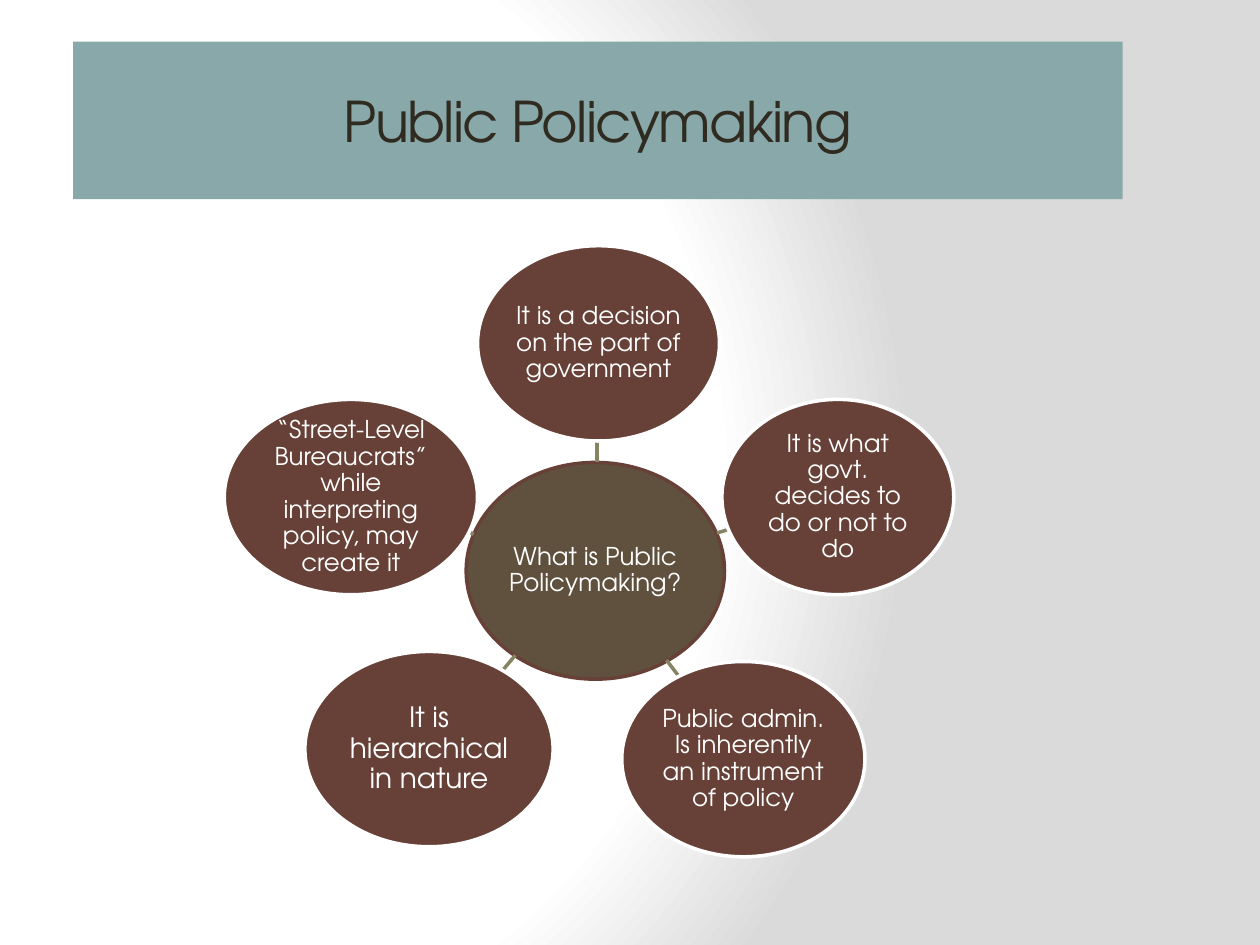
from lxml import etree
from pptx import Presentation
from pptx import util as u
from pptx.dml.color import RGBColor
from pptx.enum import shapes, text
from pptx.oxml import parse_xml
from pptx.oxml.ns import nsdecls, qn

COLS, ROWS = 100, 75
FONT = "TeX Gyre Adventor"
HUES = {
    "band": "88A8AA", "ink": "2F2B20", "hub": "5F513E", "node": "674137",
    "spoke": "878463", "white": "FFFFFF", "edge": "DADADA",
}
NODE_H = 15.5
# words, centre column, centre row, width, type size, spoke start and end
NODES = [
    ("It is a decision on the part of government",
     47.5, 27.25, 19.2, 14, (47.4, 36.7), (47.4, 35)),
    ("It is what govt. decides to do or not to do",
     66.5, 39.45, 18.4, 14, (56.9, 42.3), (57.9, 42)),
    ("Public admin. Is inherently an instrument of policy",
     59, 60.25, 19.3, 14, (52.9, 52.4), (53.9, 53.7)),
    ("It is hierarchical in nature",
     34.05, 59.45, 19.7, 16, (40.9, 52), (39.9, 53.2)),
    ("“Street-Level Bureaucrats” while interpreting policy, may create it",
     27.85, 39.45, 20.1, 14, (37.6, 42.4), (37.2, 42.2)),
]


def hue(name):
    return RGBColor.from_string(HUES[name])


def write(frame, words, size=14, color="white", lead=None, track=None, inset=None):
    """Fill a text frame with one centred paragraph."""
    frame.word_wrap = True
    frame.auto_size = text.MSO_AUTO_SIZE.NONE
    frame.vertical_anchor = text.MSO_ANCHOR.MIDDLE
    if inset is not None:
        frame.margin_left = frame.margin_right = u.Inches(inset)
        frame.margin_top = frame.margin_bottom = u.Inches(inset)
    para = frame.paragraphs[0]
    para.alignment = text.PP_ALIGN.CENTER
    if lead:
        para.line_spacing = lead
    run = para.add_run()
    run.text = words
    run.font.name, run.font.size = FONT, u.Pt(size)
    run.font.color.rgb = hue(color)
    if track:
        run.font._element.set("spc", str(track * 100))


class Deck:
    def __init__(self):
        self.prs = Presentation()
        self.prs.slide_width, self.prs.slide_height = u.Inches(10), u.Inches(7.5)
        self.slide = self.prs.slides.add_slide(self.prs.slide_layouts[5])

    def x(self, cols):
        return round(self.prs.slide_width * cols / COLS)

    def y(self, rows):
        return round(self.prs.slide_height * rows / ROWS)

    def glow(self):
        """Set a radial gradient as the background."""
        fill = self.slide.background.fill
        fill.solid()
        stops = "".join(
            f'<a:gs pos="{pos * 1000}"><a:srgbClr val="{HUES[name]}"/></a:gs>'
            for pos, name in ((0, "white"), (75, "white"), (100, "edge")))
        grad = parse_xml(
            f'<a:gradFill {nsdecls("a")} rotWithShape="1"><a:gsLst>{stops}</a:gsLst>'
            '<a:path path="circle"><a:fillToRect l="20000" t="50000" r="100000"'
            ' b="50000"/></a:path></a:gradFill>')
        old = self.slide._element.find(".//" + qn("p:bgPr") + "/" + qn("a:solidFill"))
        old.getparent().replace(old, grad)

    def title(self, words, x, y, w, h):
        box = self.slide.shapes.title
        box.left, box.top = self.x(x), self.y(y)
        box.width, box.height = self.x(w), self.y(h)
        box.fill.solid()
        box.fill.fore_color.rgb = hue("band")
        write(box.text_frame, words, size=32, color="ink", track=-1)

    def oval(self, words, mid, row, w, h, fill, line, size=14):
        """Draw an ellipse around its centre."""
        box = self.slide.shapes.add_shape(
            shapes.MSO_SHAPE.OVAL, self.x(mid - w / 2), self.y(row - h / 2),
            self.x(w), self.y(h))
        box.shadow.inherit = False
        box.fill.solid()
        box.fill.fore_color.rgb = hue(fill)
        box.line.color.rgb, box.line.width = hue(line), u.Pt(2)
        write(box.text_frame, words, size=size, lead=0.9, inset=0.01)

    def spoke(self, start, end):
        line = self.slide.shapes.add_connector(
            shapes.MSO_CONNECTOR.STRAIGHT, self.x(start[0]), self.y(start[1]),
            self.x(end[0]), self.y(end[1]))
        line.line.color.rgb, line.line.width = hue("spoke"), u.Pt(2)
        etree.SubElement(line._element.spPr, qn("a:effectLst"))


def main():
    deck = Deck()
    deck.glow()
    deck.title("Public Policymaking", 5.8, 3.3, 83.3, 12.5)
    deck.oval("What is Public Policymaking?", 47.25, 45.3, 20.5, 17.2, "hub", "node")
    for words, mid, row, width, size, start, end in NODES:
        deck.spoke(start, end)
        deck.oval(words, mid, row, width, NODE_H, "node", "white", size)
    deck.prs.save("out.pptx")


if __name__ == "__main__":
    main()
